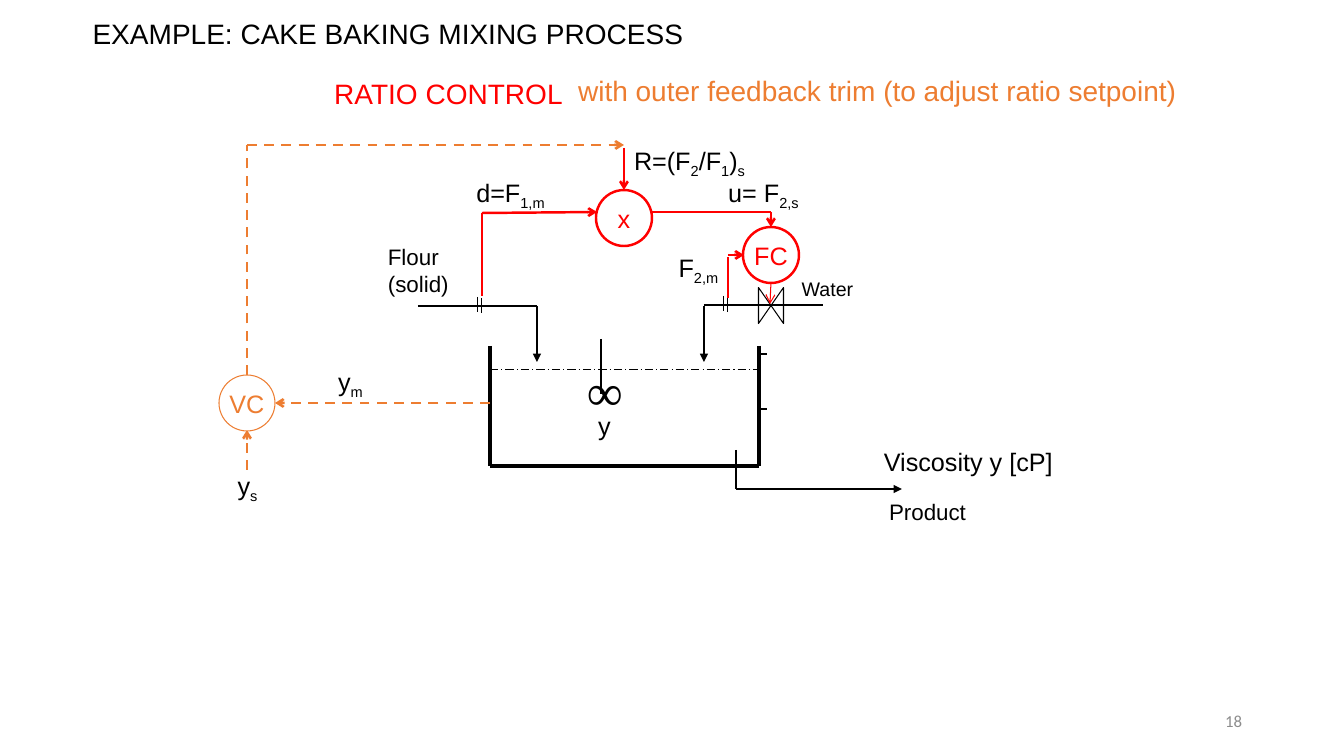
from lxml.etree import SubElement
from pptx import Presentation
from pptx.dml.color import RGBColor
from pptx.enum.dml import MSO_LINE
from pptx.enum.shapes import MSO_CONNECTOR, MSO_SHAPE
from pptx.enum.text import MSO_ANCHOR, MSO_AUTO_SIZE, PP_ALIGN
from pptx.oxml.ns import qn
from pptx.util import Emu, Pt

PX = 914400 / 100.8
COLOURS = {"black": "000000", "red": "FF0000", "orange": "ED7D31",
           "white": "FFFFFF", "grey": "8C8C8C"}
RGB = {name: RGBColor.from_string(value) for name, value in COLOURS.items()}

deck = Presentation()
deck.slide_width, deck.slide_height = Emu(round(1344 * PX)), Emu(round(756 * PX))
slide = deck.slides.add_slide(deck.slide_layouts[5])
shapes = slide.shapes


def write(frame, text, size=18, colour="black", face="Arial",
          align=PP_ALIGN.CENTER, **layout):
    """Fill a text frame; every second piece between bars is a subscript."""
    settings = {"word_wrap": False, "vertical_anchor": MSO_ANCHOR.TOP, **layout}
    for key, value in settings.items():
        setattr(frame, key, value)
    for number, line in enumerate(text.split("\n")):
        paragraph = frame.add_paragraph() if number else frame.paragraphs[0]
        paragraph.alignment = align
        for index, piece in enumerate(line.split("|")):
            run = paragraph.add_run()
            run.text = piece
            for key, value in {"size": Pt(size), "name": face, "bold": False}.items():
                setattr(run.font, key, value)
            run.font.color.rgb = RGB[colour]
            if index % 2:
                run.font._element.set("baseline", "-25000")


def connect(x1, y1, x2, y2, colour="black", width=1.5, head=None, dash=None):
    """Draw a straight line, with an arrowhead at its end if one is named."""
    line = shapes.add_connector(MSO_CONNECTOR.STRAIGHT,
                                *[Emu(round(v * PX)) for v in (x1, y1, x2, y2)])
    line.line.color.rgb = RGB[colour]
    line.line.width = Pt(width)
    if dash:
        line.line.dash_style = dash
    if head:
        SubElement(line.line._get_or_add_ln(), qn("a:tailEnd"), type=head)
    SubElement(line._element.spPr, qn("a:effectLst"))
    return line


# Title
title = shapes.title
title_box = {"left": 80, "top": 11, "width": 616, "height": 44}
for side, value in title_box.items():
    setattr(title, side, Emu(round(value * PX)))
write(title.text_frame, "EXAMPLE: CAKE BAKING MIXING PROCESS", 20,
      auto_size=MSO_AUTO_SIZE.NONE)

# Tank walls, liquid level and wall marks
LEFT, RIGHT, RIM, FLOOR = 490, 759, 346, 466
for wall in [(LEFT, RIM, LEFT, FLOOR), (LEFT, FLOOR, RIGHT, FLOOR),
             (RIGHT, RIM, RIGHT, FLOOR)]:
    connect(*wall, width=3)
connect(LEFT, 370, RIGHT, 370, width=0.75, dash=MSO_LINE.LONG_DASH_DOT)
for mark in (354, 409):
    connect(RIGHT, mark, RIGHT + 8, mark, width=0.75)

# Flour, water and product pipes
for *pipe, head in [(418, 306, 537, 306, None), (537, 306, 537, 362, "triangle"),
                    (704, 305, 823, 305, None), (704, 306, 704, 362, "triangle"),
                    (736, 450, 736, 489, None), (736, 489, 902, 489, "triangle")]:
    connect(*pipe, head=head)

# Flow meters
for x, y in [(478, 297), (482, 298), (724, 296), (728, 297)]:
    connect(x, y, x, y + 15, width=0.75)

# Water valve
valve = shapes.add_shape(MSO_SHAPE.FLOWCHART_COLLATE,
                         *[Emu(round(v * PX)) for v in (753, 293, 36, 25)])
valve.rotation = 90
valve.shadow.inherit = False
valve.fill.background()
valve.line.color.rgb = RGB["black"]
valve.line.width = Pt(0.75)

# Ratio control signals
for *signal, head in [(728, 298, 728, 257, None), (728, 255, 744, 255, "arrow"),
                      (482, 296, 482, 213, None), (482, 213, 597, 212, "arrow"),
                      (624, 148, 624, 190, "arrow"), (652, 212, 771, 212, None),
                      (771, 212, 771, 227, "arrow")]:
    connect(*signal, "red", 1.75, head)
connect(771, 283, 770, 304, "red", 0.75, "arrow")

# Outer feedback signals
for *signal, head in [(LEFT, 403, 275, 403, "arrow"), (247, 470, 247, 430, "arrow"),
                      (247, 375, 247, 145, None), (247, 145, 624, 145, "arrow")]:
    connect(*signal, "orange", 1.75, head, MSO_LINE.DASH)

# Controllers
for name, x, y, colour, width in [("FC", 743, 227, "red", 1.75),
                                  ("x", 596, 190, "red", 1.75),
                                  ("VC", 219, 375, "orange", 0.75)]:
    controller = shapes.add_shape(MSO_SHAPE.OVAL,
                                  *[Emu(round(v * PX)) for v in (x, y, 56, 56)])
    controller.shadow.inherit = False
    controller.fill.solid()
    controller.fill.fore_color.rgb = RGB["white"]
    controller.line.color.rgb = RGB[colour]
    controller.line.width = Pt(width)
    write(controller.text_frame, name, colour=colour,
          vertical_anchor=MSO_ANCHOR.MIDDLE)

# Labels
LEFT_ALIGN = {"align": PP_ALIGN.LEFT}
for text, box, style in [
    ("RATIO CONTROL", (323, 72, 251, 44), {"size": 20, "colour": "red"}),
    ("with outer feedback trim (to adjust ratio setpoint)", (559, 69, 637, 44),
     {"size": 20, "colour": "orange"}),
    ("Flour\n(solid)", (378, 238, 82, 65), {"size": 16, **LEFT_ALIGN}),
    ("Water", (791, 272, 73, 34), {"size": 14}),
    ("Product", (878, 493, 99, 37), {"size": 16}),
    ("Viscosity y [cP]", (874, 441, 190, 40), LEFT_ALIGN),
    ("y", (588, 405, 33, 40), {}),
    ("R=(F|2|/F|1|)|s", (624, 140, 131, 40), {}),
    ("u= F|2,s", (716, 172, 95, 40), {}),
    ("d=F|1,m", (464, 172, 93, 40), {}),
    ("F|2,m", (666, 247, 65, 40), {}),
    ("y|m", (327, 361, 47, 40), {}),
    ("y|s", (227, 465, 41, 40), {}),
    ("18", (950, 701, 302, 40),
     {"size": 12, "colour": "grey", "face": "Calibri", "align": PP_ALIGN.RIGHT,
      "word_wrap": True, "vertical_anchor": MSO_ANCHOR.MIDDLE}),
]:
    label = shapes.add_textbox(*[Emu(round(v * PX)) for v in box])
    write(label.text_frame, text, **style)

# Stirrer
shaft = connect(601, 339, 601, 394, width=0.75)
impeller = shapes.add_textbox(*[Emu(round(v * PX)) for v in (577, 355, 56, 71)])
write(impeller.text_frame, "∞", 36, face="Times New Roman", **LEFT_ALIGN)
shapes.add_group_shape([shaft, impeller])

deck.save("out.pptx")
